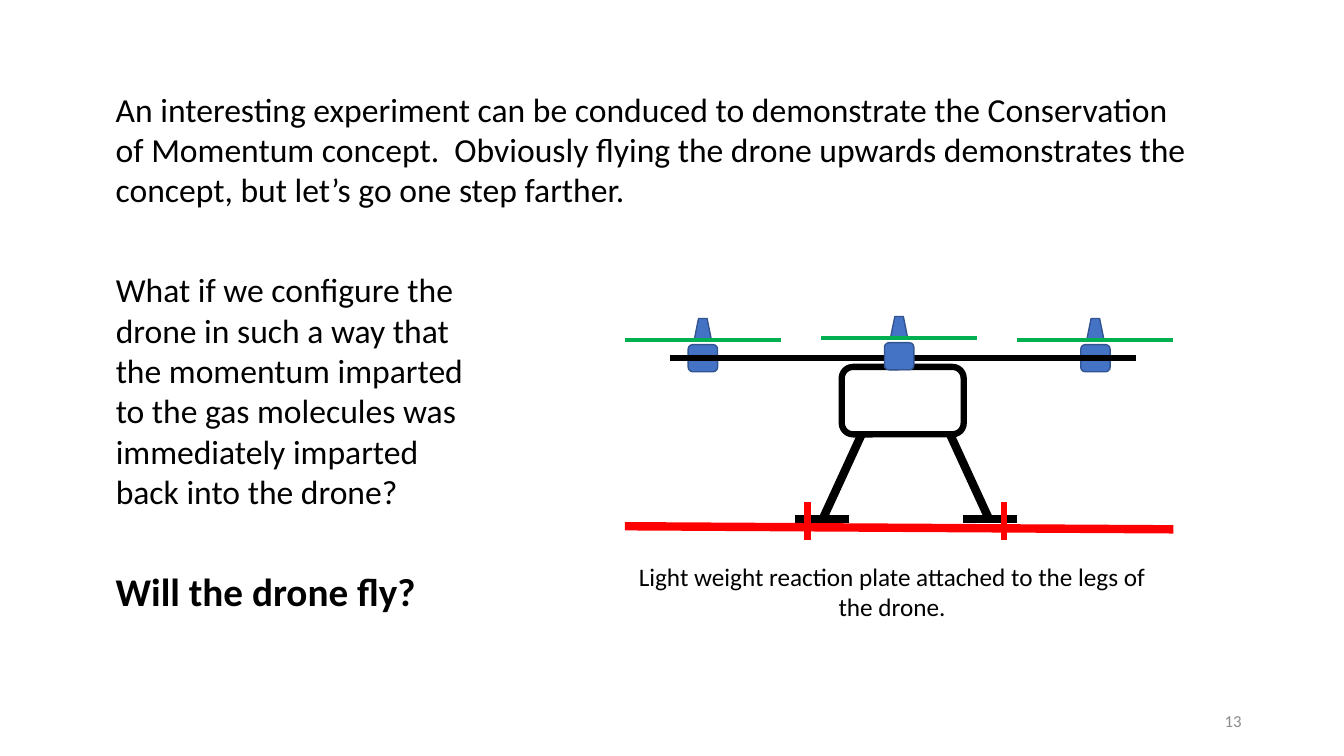
from lxml import etree
from pptx import Presentation
from pptx.dml.color import RGBColor
from pptx.enum.shapes import MSO_CONNECTOR as CONN, MSO_SHAPE as SHAPE
from pptx.enum.text import MSO_ANCHOR as ANCHOR, PP_ALIGN as ALIGN
from pptx.oxml.ns import qn
from pptx.util import Pt

BLACK = RGBColor(0x00, 0x00, 0x00)
GRAY = RGBColor(0x8C, 0x8C, 0x8C)
BLUE = RGBColor(0x44, 0x72, 0xC4)
NAVY = RGBColor(0x32, 0x54, 0x91)
GREEN = RGBColor(0x00, 0xB0, 0x50)
RED = RGBColor(0xFF, 0x00, 0x00)


def add_text(s, box, text, size, color=BLACK, bold=False,
             align=ALIGN.LEFT, anchor=ANCHOR.TOP):
    sp = s.shapes.add_textbox(*map(Pt, box))
    tf = sp.text_frame
    tf.word_wrap = True
    tf.vertical_anchor = anchor
    p = tf.paragraphs[0]
    p.text = text
    p.alignment = align
    p.font.name = "Calibri"
    p.font.size = Pt(size)
    p.font.bold = bold
    p.font.color.rgb = color


def add_line(s, x1, y1, x2, y2, color, width):
    ln = s.shapes.add_connector(CONN.STRAIGHT, Pt(x1), Pt(y1), Pt(x2), Pt(y2))
    ln.line.color.rgb = color
    ln.line.width = Pt(width)
    etree.SubElement(ln._element.spPr, qn("a:effectLst"))


def add_part(s, kind, box, fill, color, width):
    sp = s.shapes.add_shape(kind, *map(Pt, box))
    sp.shadow.inherit = False
    if fill is None:
        sp.fill.background()
    else:
        sp.fill.solid()
        sp.fill.fore_color.rgb = fill
    sp.line.color.rgb = color
    sp.line.width = Pt(width)


def add_rotor(s, cx, y):
    add_part(s, SHAPE.TRAPEZOID, (cx - 6.1, y, 12.2, 15.1), BLUE, NAVY, 1)
    add_line(s, cx - 55.7, y + 15.4, cx + 55.7, y + 15.4, GREEN, 3)
    add_part(s, SHAPE.ROUNDED_RECTANGLE, (cx - 10.5, y + 18.7, 21, 19.4),
             BLUE, NAVY, 1)


def add_leg(s, cx, y, side):
    add_line(s, cx + side * 31.3, y + 83.5, cx + side * 60.1, y + 146.2, BLACK, 6)
    add_line(s, cx + side * 40.8, y + 144.7, cx + side * 79.5, y + 144.7, BLACK, 6)


def add_drone(s, box):
    x, y, w, h = box
    mid = x + w / 2
    legs = mid + 4.8
    for side in (-1, 1):
        add_rotor(s, mid + side * 140.2, y + 1.4)
    add_part(s, SHAPE.ROUNDED_RECTANGLE, (mid - 41, y + 36, 87.1, 48.2),
             None, BLACK, 4.5)
    for side in (-1, 1):
        add_leg(s, legs, y, side)
    add_line(s, x + 32.4, y + 29.5, x + 365, y + 29.5, BLACK, 4.5)
    add_rotor(s, mid, y)
    add_line(s, x, y + 149.8, x + w, y + 152, RED, 6)
    for side in (-1, 1):
        bolt = legs + side * 70.2
        add_line(s, bolt, y + 132.5, bolt, y + h, RED, 4.5)


def add_story(s, box):
    x, y, w, h = box
    add_text(s, (x, y, w, 94.3),
             "An interesting experiment can be conduced to demonstrate the "
             "Conservation of Momentum concept.  Obviously flying the drone "
             "upwards demonstrates the concept, but let’s go one step farther.", 24)
    add_text(s, (x, y + 128.9, 279.4, 181.4),
             "What if we configure the drone in such a way that the momentum "
             "imparted to the gas molecules was immediately imparted back into "
             "the drone?", 24)
    add_text(s, (x, y + h - 41, 341.3, 41), "Will the drone fly?", 28, bold=True)


def add_figure(s, box):
    x, y, w, h = box
    add_drone(s, (x, y, w, 159.9))
    add_text(s, (x, y + h - 51.1, 381.6, 51.1),
             "Light weight reaction plate attached to the legs of the drone.",
             18, align=ALIGN.CENTER)


def main():
    prs = Presentation()
    prs.slide_width, prs.slide_height = Pt(960), Pt(540)
    s = prs.slides.add_slide(prs.slide_layouts[6])
    add_story(s, (75.6, 59.8, 789.8, 383))
    add_figure(s, (446.4, 226.1, 391.7, 222.5))
    add_text(s, (678, 500.5, 216, 28.8), "13", 12, GRAY,
             align=ALIGN.RIGHT, anchor=ANCHOR.MIDDLE)
    prs.save("out.pptx")


if __name__ == "__main__":
    main()
